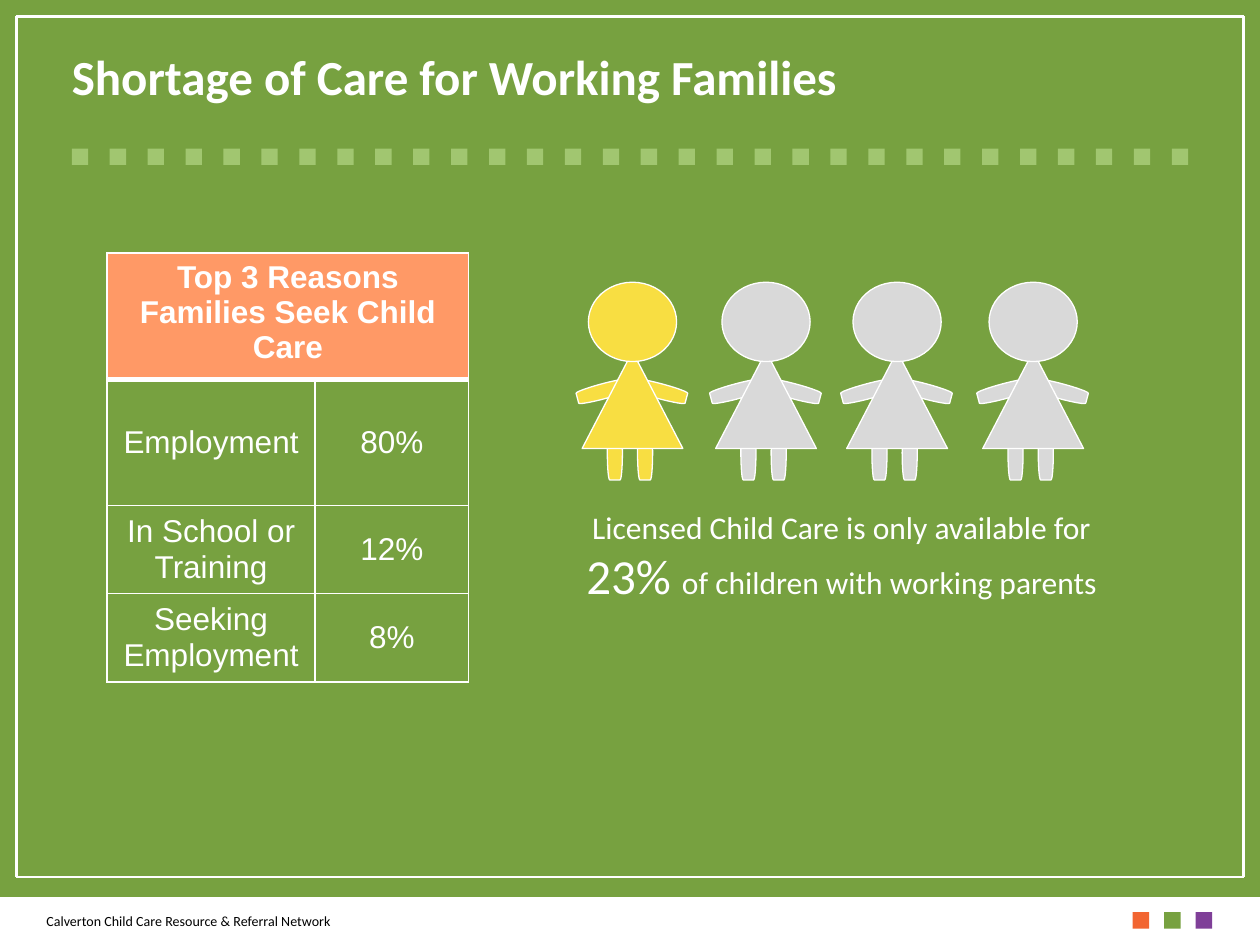
from lxml.etree import SubElement
from pptx import Presentation
from pptx.dml.color import RGBColor
from pptx.enum.shapes import MSO_CONNECTOR, MSO_SHAPE
from pptx.enum.text import MSO_ANCHOR, MSO_AUTO_SIZE, PP_ALIGN
from pptx.oxml.ns import qn
from pptx.util import Inches, Pt

# Content
TITLE = "Shortage of Care for Working Families"
FOOTER = "Calverton Child Care Resource & Referral Network"
HEAD = "Top 3 Reasons Families Seek Child Care"
REASONS = [("Employment", "80%"), ("In School or Training", "12%"),
           ("Seeking Employment", "8%")]
CAPTION = [("Licensed Child Care is only available for ", "body"),
           ("23% ", "big"), ("of children with working parents", "body")]
GIRLS = [(4.62, "yellow"), (5.68, "gray"), (6.72, "gray"), (7.8, "gray")]

# Body parts: kind, x from the girl's left, y, width, height, turn
LIMB = MSO_SHAPE.FLOWCHART_TERMINATOR
PARTS = [
    (LIMB, .11, 2.89, .12, .43, 75),
    (LIMB, .56, 2.89, .12, .43, 285),
    (LIMB, .2, 3.38, .12, .43, 0),
    (LIMB, .44, 3.38, .12, .43, 0),
    (MSO_SHAPE.ISOSCELES_TRIANGLE, 0, 2.79, .8, .77, 0),
    (MSO_SHAPE.OVAL, .05, 2.24, .7, .63, 0),
]

THEME = {
    "color": {"green": "77A140", "light": "A1C670", "white": "FFFFFF",
              "black": "000000", "orange": "F26531", "purple": "7F3F98",
              "peach": "FF9966", "yellow": "F8DE42", "gray": "D9D9D9"},
    "size": {"big": 28, "body": 18, "foot": 8},
}


def tint(name):
    return RGBColor.from_string(THEME["color"][name])


def style(item, **values):
    for key, value in values.items():
        setattr(item, key, value)


def write(para, text, size="body", color="white", face="Calibri", bold=False):
    run = para.add_run()
    run.text = text
    style(run.font, name=face, size=Pt(THEME["size"][size]), bold=bold)
    run.font.color.rgb = tint(color)


def block(home, kind, box, color, edge=None):
    shape = home.add_shape(kind, *map(Inches, box))
    shape.shadow.inherit = False
    shape.fill.solid()
    shape.fill.fore_color.rgb = tint(color)
    if edge:
        shape.line.color.rgb = tint(edge)
        shape.line.width = Pt(0.75)
    else:
        shape.line.fill.background()
    return shape


def girl(left, color):
    group = shapes.add_group_shape()
    for kind, x, y, wide, high, turn in PARTS:
        part = block(group.shapes, kind, (left + x, y, wide, high), color, "white")
        part.rotation = turn


def edges(cell, base=1):
    props = cell._tc.get_or_add_tcPr()
    for tag, width in (("lnL", 1), ("lnR", 1), ("lnT", 1), ("lnB", base)):
        line = SubElement(props, qn("a:" + tag), w=str(Pt(width)))
        fill = SubElement(line, qn("a:solidFill"))
        SubElement(fill, qn("a:srgbClr"), val=THEME["color"]["white"])


def fill_cell(cell, text, bold=False):
    para = cell.text_frame.paragraphs[0]
    para.alignment = PP_ALIGN.CENTER
    write(para, text, face="Arial", bold=bold)
    cell.vertical_anchor = MSO_ANCHOR.TOP if bold else MSO_ANCHOR.MIDDLE


def text_box(*box):
    frame = shapes.add_textbox(*map(Inches, box)).text_frame
    frame.word_wrap = True
    return frame


deck = Presentation()
style(deck, slide_width=Inches(10), slide_height=Inches(7.5))
slide = deck.slides.add_slide(deck.slide_layouts[5])
shapes = slide.shapes
slide.background.fill.solid()
slide.background.fill.fore_color.rgb = tint("green")

# Title
title = shapes.title
style(title, left=Inches(.37), top=Inches(.27), width=Inches(9.26), height=Inches(.7))
style(title.text_frame, margin_left=Inches(.2), margin_right=Inches(.2),
      margin_top=Inches(.1), margin_bottom=Inches(.2), word_wrap=True,
      auto_size=MSO_AUTO_SIZE.NONE, vertical_anchor=MSO_ANCHOR.TOP)
head = title.text_frame.paragraphs[0]
head.alignment = PP_ALIGN.LEFT
write(head, TITLE, "big", bold=True)

# Footer band and its squares
block(shapes, MSO_SHAPE.RECTANGLE, (0, 7.12, 10, .38), "white")
for i, color in enumerate(("orange", "green", "purple")):
    block(shapes, MSO_SHAPE.RECTANGLE, (8.99 + .25 * i, 7.24, .13, .13), color)
foot = text_box(.27, 7.12, 3.17, .38)
foot.vertical_anchor = MSO_ANCHOR.MIDDLE
write(foot.paragraphs[0], FOOTER, "foot", "black")

# Frame lines
L, T, R, B = .13, .13, 9.87, 6.96
for ends in ((L, T, R, T), (L, T, L, B), (R, T, R, B), (L, B, R, B)):
    line = shapes.add_connector(MSO_CONNECTOR.STRAIGHT, *map(Inches, ends))
    line.line.color.rgb = tint("white")
    line.line.width = Pt(1.5)
    SubElement(line._element.spPr, qn("a:effectLst"))

# Dotted rule: equal steps from first to last square
COUNT, FIRST, LAST = 30, .57, 9.3
for i in range(COUNT):
    x = FIRST + i * (LAST - FIRST) / (COUNT - 1)
    block(shapes, MSO_SHAPE.RECTANGLE, (x, 1.18, .13, .13), "light")

# Row of girls and caption
for left, color in GIRLS:
    girl(left, color)
note = text_box(4.4, 3.98, 4.56, .88)
note.auto_size = MSO_AUTO_SIZE.SHAPE_TO_FIT_TEXT
note.paragraphs[0].alignment = PP_ALIGN.CENTER
for text, size in CAPTION:
    write(note.paragraphs[0], text, size)

# Table of reasons
table = shapes.add_table(len(REASONS) + 1, 2, *map(Inches, (.85, 2.01, 2.87, 3.4))).table
table.horz_banding = False
for col, width in zip(table.columns, (1.65, 1.22)):
    col.width = Inches(width)
for row, height in zip(table.rows, (1, 1, .7, .7)):
    row.height = Inches(height)
for r, row in enumerate(table.rows):
    for cell in row.cells:
        edges(cell, 1 if r else 3)
        if r:
            cell.fill.background()
        else:
            cell.fill.solid()
            cell.fill.fore_color.rgb = tint("peach")
table.cell(0, 0).merge(table.cell(0, 1))
fill_cell(table.cell(0, 0), HEAD, bold=True)
for r, pair in enumerate(REASONS, 1):
    for c, text in enumerate(pair):
        fill_cell(table.cell(r, c), text)

deck.save("out.pptx")
